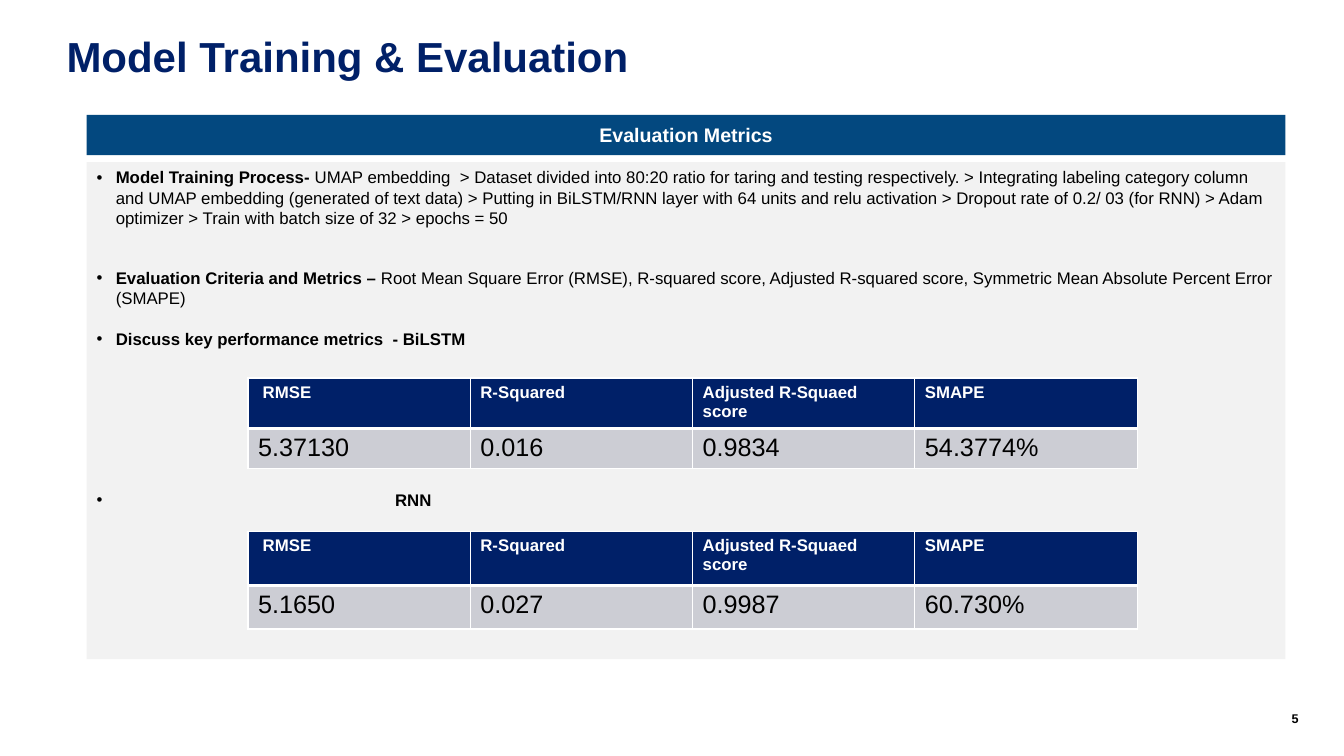
from lxml.etree import SubElement as Sub
from pptx import Presentation as Deck
from pptx.dml.color import RGBColor as Rgb
from pptx.enum.shapes import MSO_SHAPE as Geo
from pptx.enum.text import MSO_ANCHOR as Anchor, PP_ALIGN as Align
from pptx.oxml.ns import qn
from pptx.util import Pt

PX = 9144
NAVY, BLUE, PALE, GREY = "002068", "03487F", "F2F2F2", "CCCDD4"
WHITE, BLACK = "FFFFFF", "000000"


def tint(code):
    """Turn a hex string into a colour."""
    return Rgb.from_string(code)


class Page:
    """Style and current slide, with a method for each kind of element."""

    face = "Arial"

    def __init__(self, deck):
        self.slide = deck.slides.add_slide(deck.slide_layouts[6])
        self.shapes = self.slide.shapes

    def style(self, para, size, color, bold=None):
        """Set the font of a paragraph."""
        font = para.font
        font.name, font.size, font.bold = self.face, Pt(size), bold
        font.color.rgb = tint(color)

    def label(self, box, text, size, color, align=Align.LEFT, lead=None):
        """Write one bold line with no insets."""
        shape = self.shapes.add_textbox(*[n * PX for n in box])
        frame = shape.text_frame
        frame.word_wrap = True
        frame.margin_left = frame.margin_right = 0
        frame.margin_top = frame.margin_bottom = 0
        para = frame.paragraphs[0]
        para.text, para.alignment, para.line_spacing = text, align, lead
        self.style(para, size, color, True)

    def panel(self, box, fill, anchor):
        """Draw a plain rectangle and return its text frame."""
        shape = self.shapes.add_shape(Geo.RECTANGLE, *[n * PX for n in box])
        shape.shadow.inherit = False
        shape.fill.solid()
        shape.fill.fore_color.rgb = tint(fill)
        shape.line.fill.background()
        frame = shape.text_frame
        frame.word_wrap, frame.vertical_anchor = True, anchor
        return frame

    def banner(self, box, text):
        """Draw a heading bar."""
        para = self.panel(box, BLUE, Anchor.MIDDLE).paragraphs[0]
        para.text, para.alignment = text, Align.CENTER
        self.style(para, 14, WHITE, True)

    def points(self, box, items):
        """Draw a panel of bullets, each with gap, indent, lead and body."""
        frame = self.panel(box, PALE, Anchor.TOP)
        for num, (gap, hang, lead, body) in enumerate(items):
            para = frame.add_paragraph() if num else frame.paragraphs[0]
            props = para._p.get_or_add_pPr()
            props.set("marL", str(hang * PX))
            props.set("indent", str(-hang * PX))
            para.alignment = Align.LEFT
            para.line_spacing = Pt(14.4)
            if gap:
                para.space_before = Pt(gap)
            Sub(props, qn("a:buFont"), typeface=self.face)
            Sub(props, qn("a:buChar"), char="•")
            self.style(para, 12, BLACK)
            for text, bold in ((lead, True), (body, False)):
                if text:
                    run = para.add_run()
                    run.text, run.font.bold = text, bold

    def edge(self, cell, side, width):
        """Draw one white border of a cell."""
        props = cell._tc.get_or_add_tcPr()
        line = Sub(props, qn("a:ln" + side), w=str(Pt(width)))
        fill = Sub(line, qn("a:solidFill"))
        Sub(fill, qn("a:srgbClr"), val=WHITE)

    def table(self, box, highs, rows):
        """Draw a table with a dark heading row."""
        frame = self.shapes.add_table(len(rows), len(rows[0]),
                                      *[n * PX for n in box])
        grid = frame.table
        looks = ((NAVY, WHITE, 12, True, "B"), (GREY, BLACK, 18, False, "T"))
        for row, (high, texts, look) in enumerate(zip(highs, rows, looks)):
            fill, color, size, bold, thick = look
            grid.rows[row].height = high * PX
            for col, text in enumerate(texts):
                cell = grid.cell(row, col)
                for side in "LRTB":
                    self.edge(cell, side, 3 if side == thick else 1)
                cell.fill.solid()
                cell.fill.fore_color.rgb = tint(fill)
                cell.text = text
                self.style(cell.text_frame.paragraphs[0], size, color, bold)


HEADS = (" RMSE", "R-Squared", "Adjusted R-Squaed score", "SMAPE")
POINTS = (
    (0, 19, "Model Training Process- ",
     "UMAP embedding  > Dataset divided into 80:20 ratio for taring and "
     "testing respectively. > Integrating labeling category column and UMAP "
     "embedding (generated of text data) > Putting in BiLSTM/RNN layer with "
     "64 units and relu activation > Dropout rate of 0.2/ 03 (for RNN) > Adam "
     "optimizer > Train with batch size of 32 > epochs = 50"),
    (28.8, 19, "Evaluation Criteria and Metrics – ",
     "Root Mean Square Error (RMSE), R-squared score, Adjusted R-squared "
     "score, Symmetric Mean Absolute Percent Error (SMAPE)"),
    (14.4, 19, "Discuss key performance metrics  - BiLSTM", ""),
    (100.8, 296, "RNN", ""),
)
SCORES = (
    (375, (48, 38), ("5.37130", "0.016", "0.9834", "54.3774%")),
    (527, (54, 43), ("5.1650", "0.027", "0.9987", "60.730%")),
)


def main():
    """Build the slide and save it."""
    deck = Deck()
    deck.slide_width, deck.slide_height = 1333 * PX, 750 * PX
    page = Page(deck)
    page.label((66, 34, 962, 49), "Model Training & Evaluation", 30, NAVY,
               lead=0.95)
    page.label((1237, 705, 51, 20), "5", 9, BLACK, Align.RIGHT)
    page.banner((86, 114, 1189, 40), "Evaluation Metrics")
    page.points((86, 161, 1189, 493), POINTS)
    for top, highs, marks in SCORES:
        page.table((246, top, 882, sum(highs)), highs, (HEADS, marks))
    deck.save("out.pptx")


if __name__ == "__main__":
    main()
